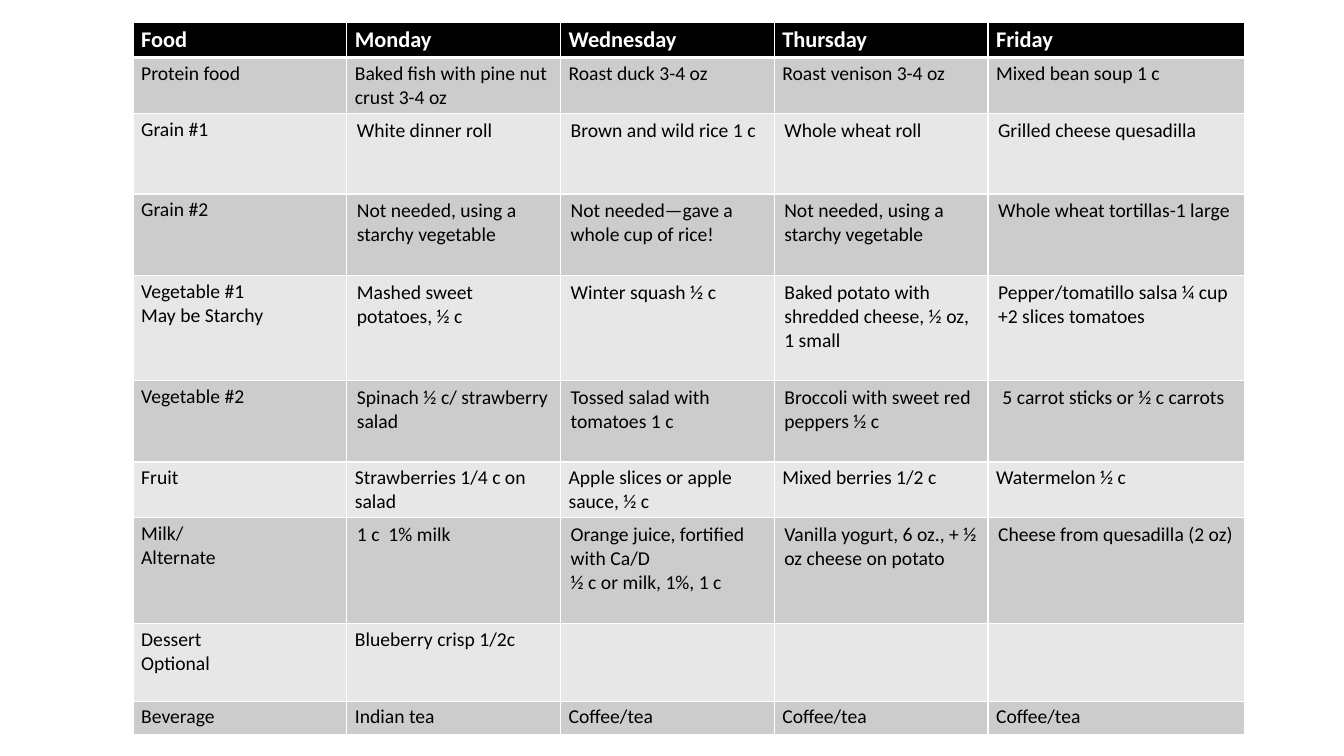
from lxml.etree import SubElement
from pptx import Presentation
from pptx.dml.color import RGBColor
from pptx.oxml.ns import qn
from pptx.util import Pt

PX = 9144
BLACK, WHITE = "000000", "FFFFFF"
BANDS = ("CCCCCC", "E7E7E7")
TIGHT, ROOMY = (8, 4), (10, 5)

COLUMN_WIDTHS = [212] * 4 + [255]
MENU = [
    (35, TIGHT, ["Food", "Monday", "Wednesday", "Thursday", "Friday"]),
    (55, TIGHT, ["Protein food", "Baked fish with pine nut crust 3-4 oz", "Roast duck 3-4 oz",
                 "Roast venison 3-4 oz", "Mixed bean soup 1 c"]),
    (80, ROOMY, ["Grain #1", "White dinner roll", "Brown and wild rice 1 c",
                 "Whole wheat roll", "Grilled cheese quesadilla"]),
    (81, ROOMY, ["Grain #2", "Not needed, using a starchy vegetable",
                 "Not needed—gave a whole cup of rice!",
                 "Not needed, using a starchy vegetable", "Whole wheat tortillas-1 large"]),
    (104, ROOMY, ["Vegetable #1\nMay be Starchy", "Mashed sweet\npotatoes, ½ c",
                  "Winter squash ½ c", "Baked potato with shredded cheese, ½ oz, 1 small",
                  "Pepper/tomatillo salsa ¼ cup +2 slices tomatoes"]),
    (81, ROOMY, ["Vegetable #2", "Spinach ½ c/ strawberry salad",
                 "Tossed salad with tomatoes 1 c", "Broccoli with sweet red peppers ½ c",
                 " 5 carrot sticks or ½ c carrots"]),
    (55, TIGHT, ["Fruit", "Strawberries 1/4 c on salad", "Apple slices or apple sauce, ½ c",
                 "Mixed berries 1/2 c", "Watermelon ½ c"]),
    (105, ROOMY, ["Milk/\nAlternate", "1 c  1% milk",
                  "Orange juice, fortified with Ca/D\n½ c or milk, 1%, 1 c",
                  "Vanilla yogurt, 6 oz., + ½ oz cheese on potato",
                  "Cheese from quesadilla (2 oz)"]),
    (77, TIGHT, ["Dessert\nOptional", "Blueberry crisp 1/2c", "", "", ""]),
    (33, TIGHT, ["Beverage", "Indian tea"] + ["Coffee/tea"] * 3),
]


def color(value):
    return RGBColor.from_string(value)


def write(frame, text, size=14, ink=BLACK, bold=False, font="Calibri"):
    frame.word_wrap = True
    for index, line in enumerate(text.split("\n")):
        para = frame.add_paragraph() if index else frame.paragraphs[0]
        para.font.size = Pt(size)
        if line:
            span = para.add_run()
            span.text = line
            span.font.name = font
            span.font.size = Pt(size)
            span.font.bold = bold
            span.font.color.rgb = color(ink)


class MenuPage:
    def __init__(self, deck):
        self.page = deck.slides.add_slide(deck.slide_layouts[6])

    def border(self, cell, **widths):
        properties = cell._tc.get_or_add_tcPr()
        for side in "LRTB":
            line = SubElement(properties, qn(f"a:ln{side}"), w=str(Pt(widths.get(side, 1))))
            paint = SubElement(line, qn("a:solidFill"))
            SubElement(paint, qn("a:srgbClr"), val=WHITE)

    def cell(self, cell, text, fill, inset, borders, **style):
        cell.margin_left = cell.margin_right = inset[0] * PX
        cell.margin_top = cell.margin_bottom = inset[1] * PX
        self.border(cell, **borders)
        cell.fill.solid()
        cell.fill.fore_color.rgb = color(fill)
        write(cell.text_frame, text, **style)

    def table(self, left, top, widths, rows):
        height = sum(row[0] for row in rows)
        table = self.page.shapes.add_table(
            len(rows), len(widths), left * PX, top * PX, sum(widths) * PX, height * PX).table
        for column, width in zip(table.columns, widths):
            column.width = width * PX
        for r, (row_height, inset, texts) in enumerate(rows):
            table.rows[r].height = row_height * PX
            fill = BANDS[(r - 1) % 2] if r else BLACK
            style = {} if r else {"size": 16, "ink": WHITE, "bold": True}
            borders = {0: {"B": 3}, 1: {"T": 3}}.get(r, {})
            for c, text in enumerate(texts):
                self.cell(table.cell(r, c), text, fill, inset if c else TIGHT, borders, **style)


def main():
    deck = Presentation()
    deck.slide_width, deck.slide_height = 1333 * PX, 750 * PX
    MenuPage(deck).table(132, 22, COLUMN_WIDTHS, MENU)
    deck.save("out.pptx")


if __name__ == "__main__":
    main()
